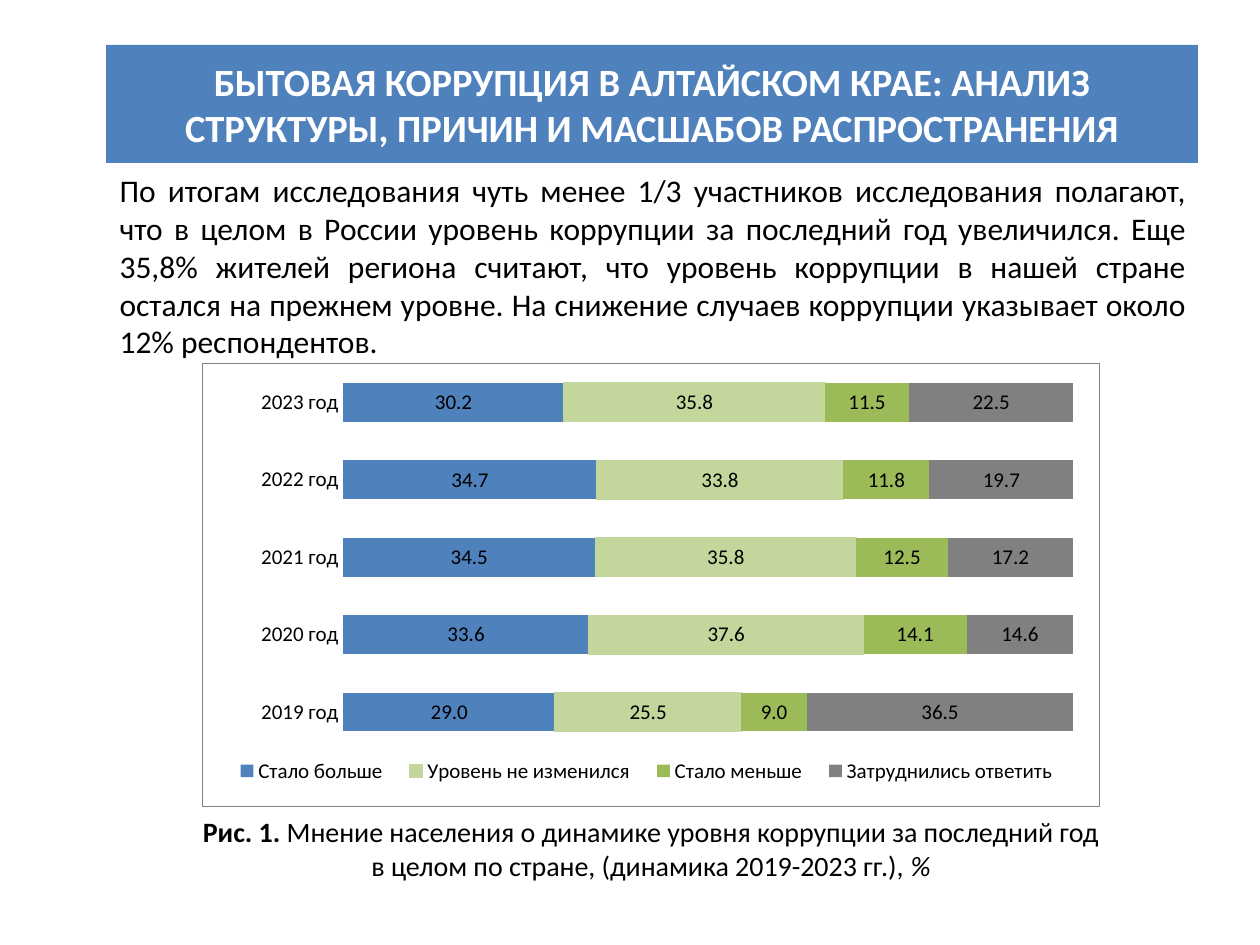
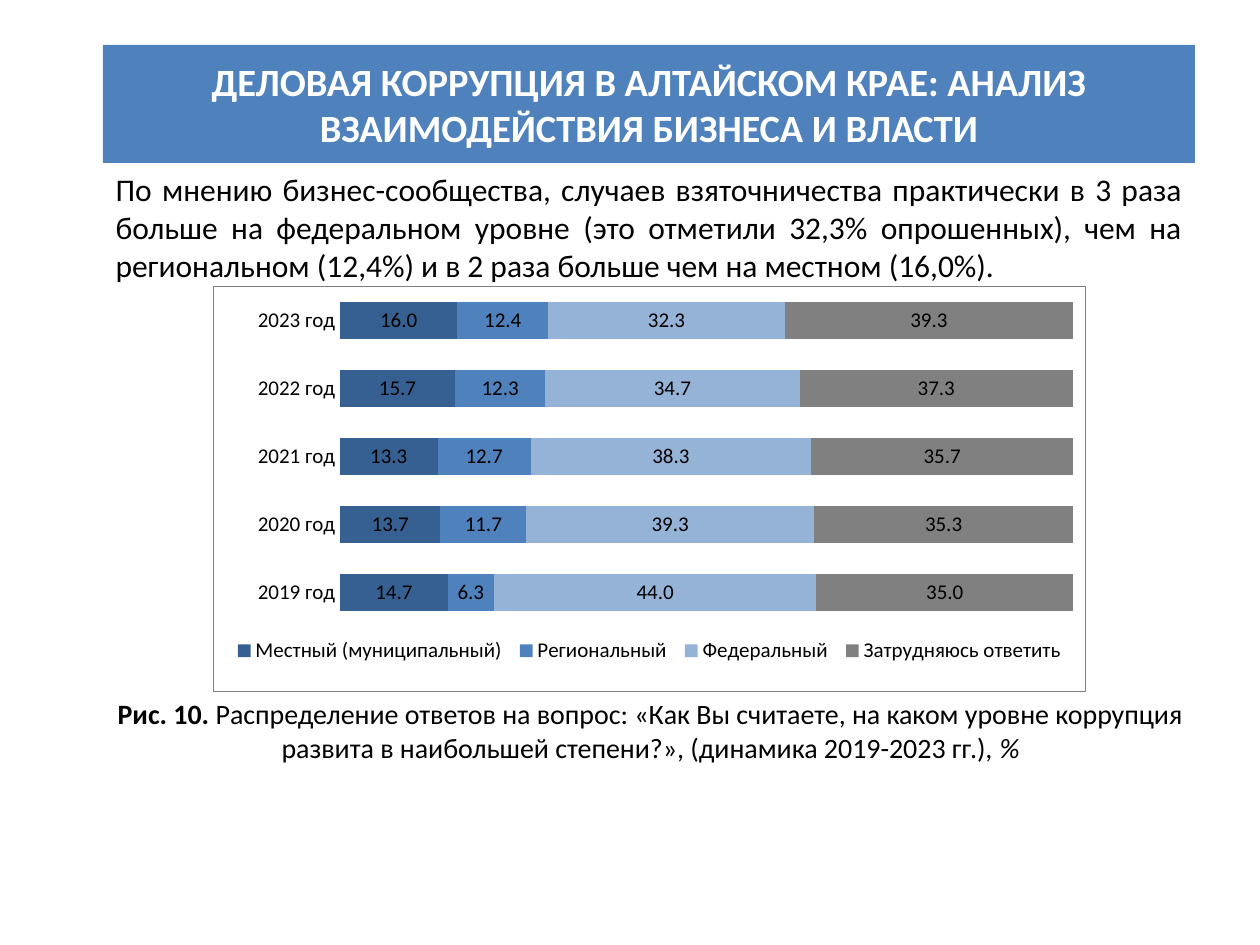
import pptx
import pptx.chart.data
import pptx.dml.color
import pptx.enum.chart
import pptx.enum.text
import pptx.oxml
import pptx.oxml.ns
import pptx.util

PX = 914400 / 126
FONT = "Calibri"
COLORS = {
    "white": "FFFFFF", "black": "000000", "gray": "808080",
    "navy": "376092", "blue": "4F81BD", "sky": "95B3D7",
    "pale": "C3D69B", "green": "9BBB59",
}
RGB = {name: pptx.dml.color.RGBColor.from_string(value) for name, value in COLORS.items()}
NAMESPACES = pptx.oxml.ns.nsdecls("c", "a")


def style_font(font, size, color="black", bold=None, italic=None):
    font.name = FONT
    font.size = pptx.util.Pt(size)
    font.color.rgb = RGB[color]
    font.bold = bold
    font.italic = italic


def place_by_layout(parent, index, bounds, target=""):
    for old_layout in parent.findall(pptx.oxml.ns.qn("c:layout")):
        parent.remove(old_layout)
    x, y, width, height = bounds
    parent.insert(index, pptx.oxml.parse_xml(
        f'<c:layout {NAMESPACES}><c:manualLayout>{target}'
        f'<c:xMode val="edge"/><c:yMode val="edge"/>'
        f'<c:x val="{x}"/><c:y val="{y}"/><c:w val="{width}"/><c:h val="{height}"/>'
        f'</c:manualLayout></c:layout>'))


years = [f"{year} год" for year in range(2019, 2024)]

pages = [
    {
        "title": "БЫТОВАЯ КОРРУПЦИЯ В АЛТАЙСКОМ КРАЕ: АНАЛИЗ СТРУКТУРЫ, ПРИЧИН И МАСШАБОВ РАСПРОСТРАНЕНИЯ",
        "title_box": (106, 45, 1092, 118),
        "body": "По итогам исследования чуть менее 1/3 участников исследования полагают, "
                "что в целом в России уровень коррупции за последний год увеличился. "
                "Еще 35,8% жителей региона считают, что уровень коррупции в нашей стране "
                "остался на прежнем уровне. На снижение случаев коррупции указывает около 12% респондентов.",
        "body_box": (107, 165, 1092, 198),
        "caption": [
            [("Рис. 1. ", True, False),
             ("Мнение населения о динамике уровня коррупции за последний год", False, False)],
            [("в целом по стране, (динамика 2019-2023 гг.), ", False, False), ("%", False, True)],
        ],
        "caption_box": (106, 808, 1090, 81),
        "chart_box": (202, 363, 898, 444),
        "categories": years,
        "reverse": False,
        "gap": 100,
        "plot": (0.157, 0, 0.814, 0.875),
        "legend": (0.02, 0.88, 0.95, 0.08),
        "series": [
            ("Стало больше", "blue", (29, 33.6, 34.5, 34.7, 30.2)),
            ("Уровень не изменился", "pale", (25.5, 37.6, 35.8, 33.8, 35.8)),
            ("Стало меньше", "green", (9, 14.1, 12.5, 11.8, 11.5)),
            ("Затруднились ответить", "gray", (36.5, 14.6, 17.2, 19.7, 22.5)),
        ],
    },
    {
        "title": "ДЕЛОВАЯ КОРРУПЦИЯ В АЛТАЙСКОМ КРАЕ: АНАЛИЗ ВЗАИМОДЕЙСТВИЯ БИЗНЕСА И ВЛАСТИ",
        "title_box": (103, 45, 1092, 118),
        "body": "По мнению бизнес-сообщества, случаев взяточничества практически в 3 раза "
                "больше на федеральном уровне (это отметили 32,3% опрошенных), чем на "
                "региональном (12,4%) и в 2 раза больше чем на местном (16,0%).",
        "body_box": (103, 164, 1092, 120),
        "caption": [
            [("Рис. 10. ", True, False),
             ("Распределение ответов на вопрос: «Как Вы считаете, на каком уровне коррупция "
              "развита в наибольшей степени?», (динамика 2019-2023 гг.), ", False, False),
             ("%", False, True)],
        ],
        "caption_box": (105, 690, 1091, 81),
        "chart_box": (213, 286, 873, 406),
        "categories": years[::-1],
        "reverse": True,
        "gap": 80,
        "plot": (0.145, 0, 0.841, 0.84),
        "legend": (0.015, 0.86, 0.97, 0.08),
        "series": [
            ("Местный (муниципальный)", "navy", (16, 15.7, 13.3, 13.7, 14.7)),
            ("Региональный", "blue", (12.4, 12.3, 12.7, 11.7, 6.3)),
            ("Федеральный", "sky", (32.3, 34.7, 38.3, 39.3, 44)),
            ("Затрудняюсь ответить", "gray", (39.3, 37.3, 35.7, 35.3, 35)),
        ],
    },
]

presentation = pptx.Presentation()
presentation.slide_width = round(1260 * PX)
presentation.slide_height = round(945 * PX)

for page in pages:
    slide = presentation.slides.add_slide(presentation.slide_layouts[1])
    boxes = {name: [round(length * PX) for length in page[f"{name}_box"]]
             for name in ("title", "body", "caption", "chart")}

    title = slide.shapes.title
    body = slide.placeholders[1]
    for name, placeholder in (("title", title), ("body", body)):
        placeholder.left, placeholder.top, placeholder.width, placeholder.height = boxes[name]
        placeholder.text_frame.auto_size = pptx.enum.text.MSO_AUTO_SIZE.NONE

    title.fill.solid()
    title.fill.fore_color.rgb = RGB["blue"]
    title.text_frame.vertical_anchor = pptx.enum.text.MSO_ANCHOR.MIDDLE
    paragraph = title.text_frame.paragraphs[0]
    paragraph.alignment = pptx.enum.text.PP_ALIGN.CENTER
    run = paragraph.add_run()
    run.text = page["title"]
    style_font(run.font, 22, "white", bold=True)

    paragraph = body.text_frame.paragraphs[0]
    paragraph.alignment = pptx.enum.text.PP_ALIGN.JUSTIFY
    paragraph.space_before = pptx.util.Pt(0)
    properties = paragraph._p.get_or_add_pPr()
    properties.set("marL", "0")
    properties.set("indent", "0")
    properties.append(pptx.oxml.parse_xml(f"<a:buNone {NAMESPACES}/>"))
    run = paragraph.add_run()
    run.text = page["body"]
    style_font(run.font, 18)

    caption = slide.shapes.add_textbox(*boxes["caption"]).text_frame
    caption.word_wrap = True
    caption.auto_size = pptx.enum.text.MSO_AUTO_SIZE.SHAPE_TO_FIT_TEXT
    caption.vertical_anchor = pptx.enum.text.MSO_ANCHOR.MIDDLE
    for number, pieces in enumerate(page["caption"]):
        paragraph = caption.add_paragraph() if number else caption.paragraphs[0]
        paragraph.alignment = pptx.enum.text.PP_ALIGN.CENTER
        for text, bold, italic in pieces:
            run = paragraph.add_run()
            run.text = text
            style_font(run.font, 16, bold=bold, italic=italic)

    chart_data = pptx.chart.data.CategoryChartData(number_format="0.0")
    chart_data.categories = page["categories"]
    for name, color, values in page["series"]:
        chart_data.add_series(name, values)
    chart = slide.shapes.add_chart(
        pptx.enum.chart.XL_CHART_TYPE.BAR_STACKED_100, *boxes["chart"], chart_data).chart
    style_font(chart.font, 12)
    chart.has_title = False

    plot = chart.plots[0]
    plot.gap_width = page["gap"]
    plot.overlap = 100
    plot.vary_by_categories = False
    for series, (name, color, values) in zip(plot.series, page["series"]):
        series.format.fill.solid()
        series.format.fill.fore_color.rgb = RGB[color]
        series.invert_if_negative = False
        if color == "pale":
            series.format.line.color.rgb = RGB[color]
            series.format.line.width = pptx.util.Pt(0.75)
        labels = series.data_labels
        labels.show_value = True
        labels.number_format = "0.0"
        labels.number_format_is_linked = False
        style_font(labels.font, 12)

    axis = chart.category_axis
    axis.reverse_order = page["reverse"]
    axis.major_tick_mark = pptx.enum.chart.XL_TICK_MARK.NONE
    axis.format.line.fill.background()
    style_font(axis.tick_labels.font, 12)
    chart.value_axis.has_major_gridlines = False
    chart.value_axis.visible = False

    chart.has_legend = True
    chart.legend.position = pptx.enum.chart.XL_LEGEND_POSITION.BOTTOM
    chart.legend.include_in_layout = False
    style_font(chart.legend.font, 12)

    chart_element = chart.element.find(pptx.oxml.ns.qn("c:chart"))
    place_by_layout(chart_element.find(pptx.oxml.ns.qn("c:plotArea")), 0, page["plot"],
                    '<c:layoutTarget val="inner"/>')
    place_by_layout(chart_element.find(pptx.oxml.ns.qn("c:legend")), 1, page["legend"])
    chart_element.addnext(pptx.oxml.parse_xml(
        f'<c:spPr {NAMESPACES}><a:solidFill><a:srgbClr val="{COLORS["white"]}"/></a:solidFill>'
        f'<a:ln w="9525"><a:solidFill><a:srgbClr val="{COLORS["gray"]}"/></a:solidFill></a:ln></c:spPr>'))

presentation.save("out.pptx")
